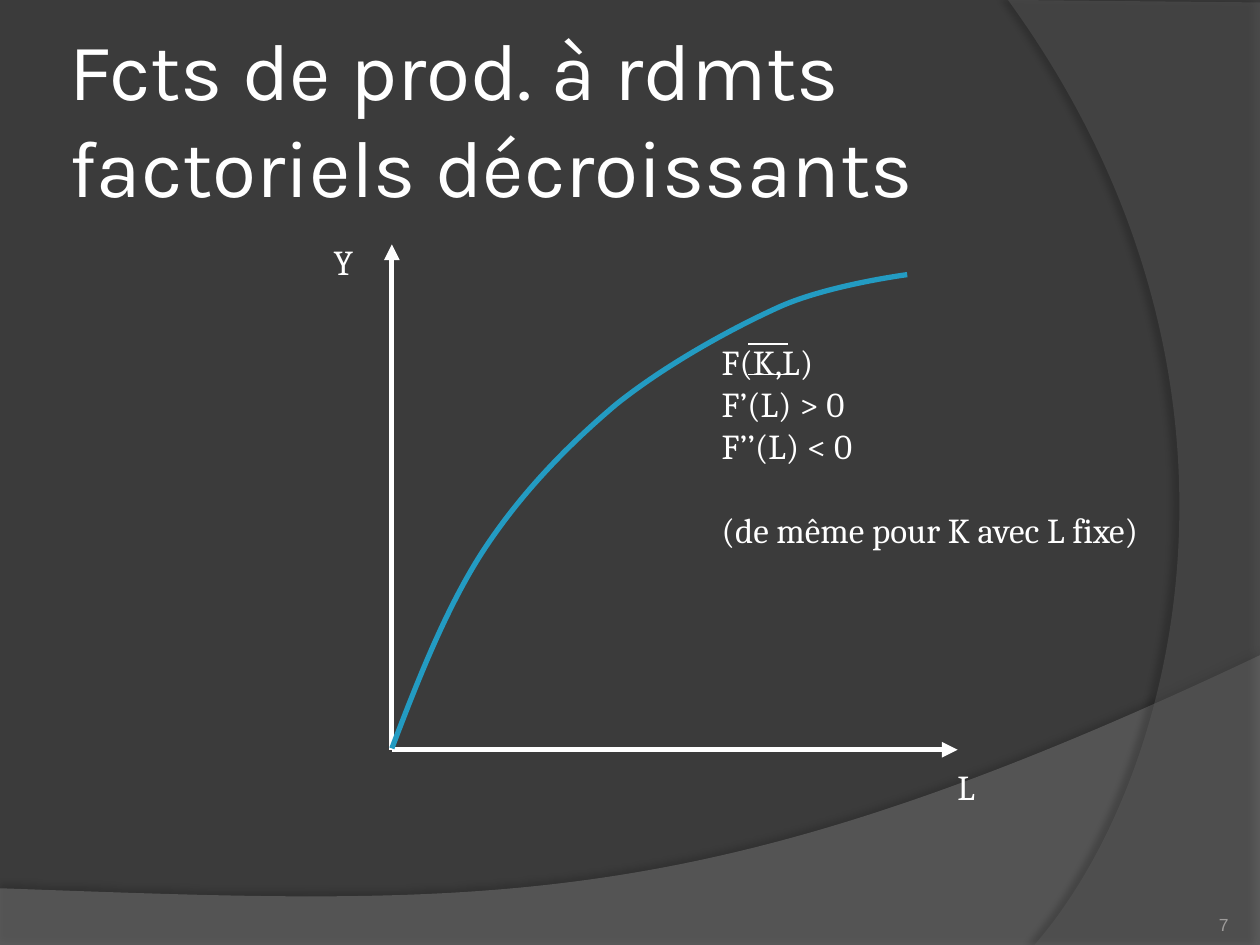
from lxml import etree
from pptx import Presentation, util as u
from pptx.dml import color
from pptx.enum import shapes, text
from pptx.oxml import ns

WHITE, CURVE_BLUE = "FFFFFF", "239BC2"


def rgb(value):
    return color.RGBColor.from_string(value)


def add_xml(parent, tag, **attributes):
    return etree.SubElement(parent, ns.qn(tag), attributes)


class Deck:
    """Holds the text style and the slide being filled."""

    label = {"name": "Cambria", "size": u.Pt(20)}

    def __init__(self, width, height, background):
        self.presentation = Presentation()
        self.presentation.slide_width = u.Inches(width)
        self.presentation.slide_height = u.Inches(height)
        self.slide = self.presentation.slides.add_slide(self.presentation.slide_layouts[6])
        fill = self.slide.background.fill
        fill.solid()
        fill.fore_color.rgb = rgb(background)

    def text(self, box, lines, font=None, ink=WHITE, inset=(0.1, 0.05), wrap=True,
             anchor=text.MSO_ANCHOR.TOP, align=text.PP_ALIGN.LEFT):
        frame = self.slide.shapes.add_textbox(*map(u.Inches, box)).text_frame
        side, edge = map(u.Inches, inset)
        layout = {"word_wrap": wrap, "vertical_anchor": anchor,
                  "margin_left": side, "margin_right": side,
                  "margin_top": edge, "margin_bottom": edge}
        for name, value in layout.items():
            setattr(frame, name, value)
        frame.text = "\n".join(lines)
        for paragraph in frame.paragraphs:
            paragraph.alignment = align
            run_font = paragraph.runs[0].font
            run_font.color.rgb = rgb(ink)
            for name, value in (font or self.label).items():
                setattr(run_font, name, value)
        return frame

    def line(self, start, end, width, arrow=False):
        connector = self.slide.shapes.add_connector(
            shapes.MSO_CONNECTOR.STRAIGHT, *map(u.Inches, start + end))
        connector.line.color.rgb = rgb(WHITE)
        connector.line.width = u.Pt(width)
        properties = connector._element.spPr
        if arrow:
            add_xml(properties.find(ns.qn("a:ln")), "a:tailEnd", type="triangle")
        add_xml(properties, "a:effectLst")

    def outline(self, start, segments, closed):
        """Join segments, each (end,) for a line or (control, control, end) for a curve."""
        ends = [tuple(map(u.Inches, segment[-1])) for segment in segments]
        builder = self.slide.shapes.build_freeform(*map(u.Inches, start))
        builder.add_line_segments(ends, close=closed)
        shape = builder.convert_to_shape()
        shape.shadow.inherit = False
        steps = list(shape._element.iter(ns.qn("a:lnTo")))
        for step, (*controls, _) in zip(steps, segments):
            if controls:
                step.tag = ns.qn("a:cubicBezTo")
            for index, (x, y) in enumerate(controls):
                point = add_xml(step, "a:pt", x=str(u.Inches(x) - shape.left),
                                y=str(u.Inches(y) - shape.top))
                step.insert(index, point)
        return shape

    def curve(self, start, segments, ink, width):
        shape = self.outline(start, segments, closed=False)
        shape.fill.background()
        shape.line.color.rgb = rgb(ink)
        shape.line.width = u.Pt(width)

    def wave(self, start, segments, ink, opacity, shadow_opacity, distance, direction):
        """Draw a translucent background area with a soft shadow."""
        shape = self.outline(start, segments, closed=True)
        shape.line.fill.background()
        shape.fill.solid()
        shape.fill.fore_color.rgb = rgb(ink)
        properties = shape._element.spPr
        fill_color = properties.find(ns.qn("a:solidFill"))[0]
        add_xml(fill_color, "a:alpha", val=str(opacity * 1000))
        shadow = add_xml(properties.find(ns.qn("a:effectLst")), "a:outerShdw",
                         blurRad=str(u.Pt(4)), dist=str(u.Pt(distance)),
                         dir=str(direction * 60000), algn="ctr", rotWithShape="0")
        shadow_color = add_xml(shadow, "a:srgbClr", val="000000")
        add_xml(shadow_color, "a:alpha", val=str(shadow_opacity * 1000))


def main():
    deck = Deck(10, 7.5, "3B3B3B")

    bottom_edge = [((0, 7.51),), ((10, 7.51),), ((10, 5.2),),
                   ((5.59, 7.29), (3.91, 7.19), (0, 7.05))]
    deck.wave((0, 7.05), bottom_edge, "7F7F7F", 45, 35, 3.5, 270)
    right_edge = [((10, 7.5),), ((8.21, 7.5),),
                  ((9.35, 6.19), (10.18, 3), (8, 0)), ((10, 0.02),)]
    deck.wave((10, 0.02), right_edge, "5E5E5E", 40, 45, 4, 180)

    deck.text((0.5, 0.3, 8.75, 1.25), ["Fcts de prod. à rdmts factoriels décroissants"],
              font={"name": "Karla", "size": u.Pt(46)}, inset=(0.05, 0.05),
              anchor=text.MSO_ANCHOR.MIDDLE)

    origin = (3.11, 5.95)
    for axis_end in ((7.6, 5.95), (3.11, 1.94)):
        deck.line(origin, axis_end, 3, arrow=True)
    deck.text((7.5, 6.03, 0.37, 0.44), ["L"], wrap=False)
    deck.text((2.55, 1.86, 0.41, 0.44), ["Y"])

    conditions = deck.text((5.63, 2.65, 3.94, 1.78), [
        "F(K,L)", "F’(L) > 0", "F’’(L) < 0", "(de même pour K avec L fixe)"])
    conditions.paragraphs[-1].space_before = u.Pt(24)
    for bar_top in (2.73, 2.97):
        deck.line((5.94, bar_top), (6.25, bar_top), 0.75)

    production = [((3.32, 5.39), (3.54, 4.83), (3.83, 4.38)),
                  ((4.13, 3.92), (4.5, 3.54), (4.89, 3.21)),
                  ((5.29, 2.89), (5.82, 2.6), (6.2, 2.43)),
                  ((6.59, 2.26), (7.2, 2.18), (7.2, 2.18))]
    deck.curve((3.11, 5.94), production, CURVE_BLUE, 3)

    deck.text((8.92, 7.02, 0.83, 0.4), ["7"], font={"name": "Arial", "size": u.Pt(10)},
              ink="9D9B9A", inset=(0, 0), anchor=text.MSO_ANCHOR.BOTTOM,
              align=text.PP_ALIGN.RIGHT)

    deck.presentation.save("out.pptx")


if __name__ == "__main__":
    main()
